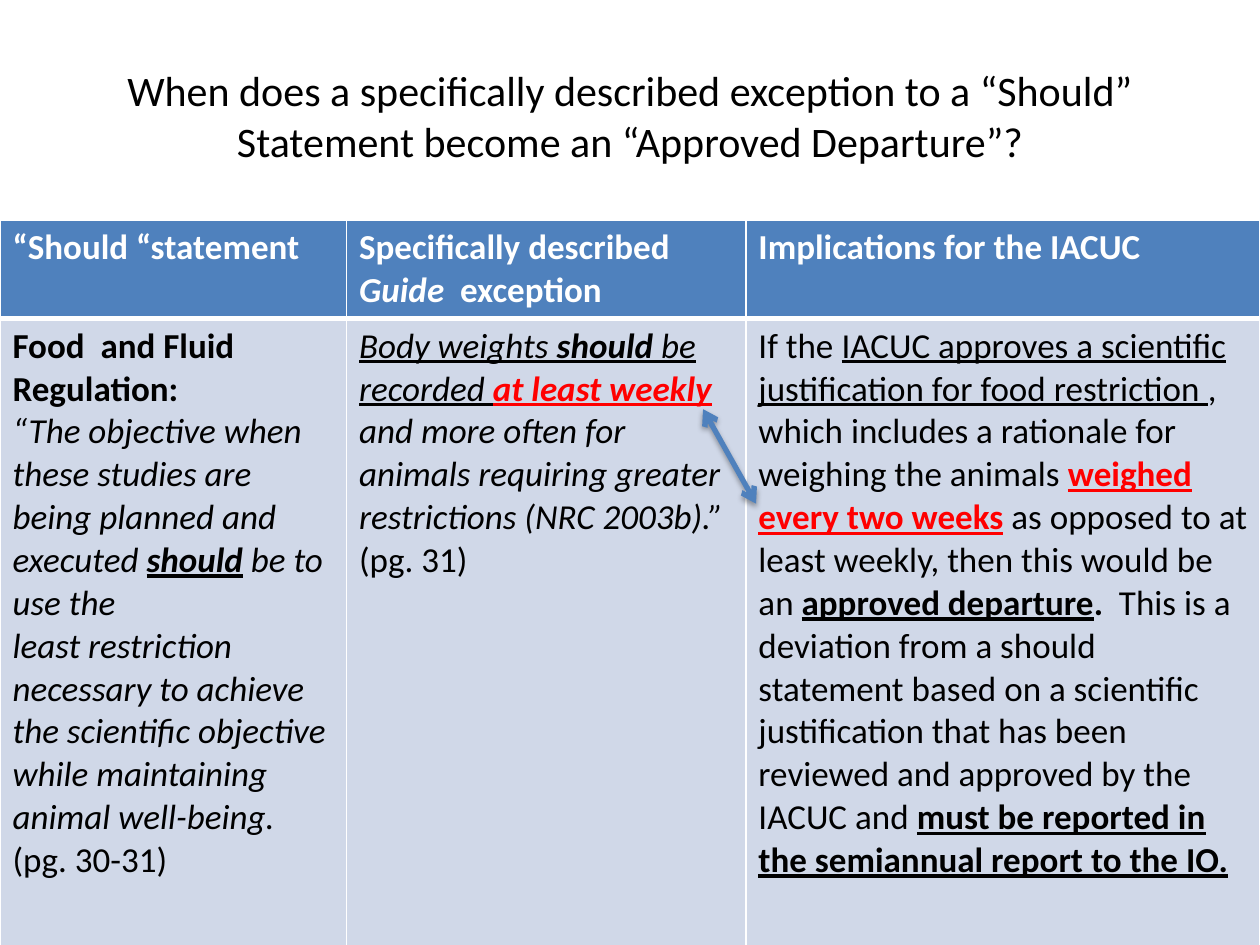
from typing import NamedTuple

from lxml import etree
from pptx import Presentation
from pptx import util as u
from pptx.dml.color import RGBColor
from pptx.enum import shapes, text
from pptx.oxml import ns

WIDTH, HEIGHT = u.Inches(10), u.Inches(7.5)
BLUE, PALE, WHITE, BLACK, RED = "4F81BD", "D0D8E8", "FFFFFF", "000000", "FF0000"


class Run(NamedTuple):
    text: str
    style: str = ""
    color: str = BLACK


class Cell(NamedTuple):
    paragraphs: list[list[Run]]
    fill: str = PALE
    bottom: float = 1


def header(*runs: Run) -> Cell:
    return Cell([[Run(r.text, r.style + "b", WHITE) for r in runs]], BLUE, 3)


COLUMNS = [0.275, 0.317, 0.408]
ROWS = [0.102, 0.676]
CELLS = [
    [
        header(Run("“Should “statement")),
        header(Run("Specifically described "), Run("Guide ", "i"), Run(" exception")),
        header(Run("Implications for the IACUC")),
    ],
    [
        Cell([
            [Run("Food  and Fluid Regulation:", "b")],
            [Run("“The objective when these studies are being planned and executed ", "i"),
             Run("should", "biu"), Run(" be to use the", "i")],
            [Run("least restriction necessary to achieve the scientific objective "
                 "while maintaining animal well-being. ", "i"), Run("(pg. 30-31)")],
        ]),
        Cell([[
            Run("Body weights ", "iu"), Run("should", "biu"), Run(" be recorded ", "iu"),
            Run("at least weekly ", "biu", RED),
            Run("and more often for animals requiring greater restrictions (NRC 2003b).”  ", "i"),
            Run("(pg. 31)"),
        ]]),
        Cell([[
            Run("If the "),
            Run("IACUC approves a scientific justification for food restriction ", "u"),
            Run(", which includes a rationale for  weighing the animals "),
            Run("weighed every two weeks", "bu", RED),
            Run(" as opposed to at least weekly, then this would be an "),
            Run("approved departure", "bu"), Run(".", "b"),
            Run(" \u00a0This is a deviation from a should statement based on a scientific "
                "justification that has been reviewed and approved by the IACUC and "),
            Run("must be reported in the semiannual report to the IO.", "bu"),
        ]]),
    ],
]


def rgb(color: str) -> RGBColor:
    return RGBColor.from_string(color)


def x(share: float) -> int:
    return round(WIDTH * share)


def y(share: float) -> int:
    return round(HEIGHT * share)


def add_run(p, content: str, *, size: float, color: str = BLACK, style: str = "") -> None:
    r = p.add_run()
    r.text = content
    r.font.name = "Calibri"
    r.font.size = u.Pt(size)
    r.font.color.rgb = rgb(color)
    r.font.bold = "b" in style
    r.font.italic = "i" in style
    r.font.underline = "u" in style


def add_child(parent, tag: str, **attributes):
    return etree.SubElement(parent, ns.qn(tag), {k: str(v) for k, v in attributes.items()})


def set_borders(cell, top: float, bottom: float) -> None:
    tc_pr = cell._tc.get_or_add_tcPr()
    for side, width in (("L", 1), ("R", 1), ("T", top), ("B", bottom)):
        line = add_child(tc_pr, f"a:ln{side}", w=u.Pt(width))
        add_child(add_child(line, "a:solidFill"), "a:srgbClr", val=WHITE)


def draw_title(s, content: str) -> None:
    sp = s.shapes.title
    sp.left, sp.top, sp.width, sp.height = x(0.05), y(0.044), x(0.9), y(0.156)
    tf = sp.text_frame
    tf.word_wrap = True
    tf.vertical_anchor = text.MSO_ANCHOR.MIDDLE
    p = tf.paragraphs[0]
    p.alignment = text.PP_ALIGN.CENTER
    add_run(p, content, size=24)


def draw_cell(cell, content: Cell, top: float) -> None:
    set_borders(cell, top, content.bottom)
    cell.fill.solid()
    cell.fill.fore_color.rgb = rgb(content.fill)
    tf = cell.text_frame
    for i, runs in enumerate(content.paragraphs):
        p = tf.add_paragraph() if i else tf.paragraphs[0]
        for run in runs:
            add_run(p, run.text, size=20, color=run.color, style=run.style)


def draw_table(s) -> None:
    table = s.shapes.add_table(len(ROWS), len(COLUMNS), 0, y(0.233),
                               WIDTH, y(sum(ROWS))).table
    for column, share in zip(table.columns, COLUMNS):
        column.width = x(share)
    for row, share in zip(table.rows, ROWS):
        row.height = y(share)
    for i, contents in enumerate(CELLS):
        for j, content in enumerate(contents):
            top = CELLS[i - 1][j].bottom if i else 1
            draw_cell(table.cell(i, j), content, top)


def draw_arrow(s, start: tuple[float, float], end: tuple[float, float]) -> None:
    c = s.shapes.add_connector(shapes.MSO_CONNECTOR.STRAIGHT,
                               x(start[0]), y(start[1]), x(end[0]), y(end[1]))
    c.line.color.rgb = rgb(BLUE)
    c.line.width = u.Pt(3)
    ln = c.line._get_or_add_ln()
    for tag in ("a:headEnd", "a:tailEnd"):
        add_child(ln, tag, type="arrow")
    effects = add_child(c._element.spPr, "a:effectLst")
    shadow = add_child(effects, "a:outerShdw", blurRad=u.Pt(3.1), dist=u.Pt(1.8),
                       dir=90 * 60000, rotWithShape=0)
    add_child(add_child(shadow, "a:srgbClr", val=BLACK), "a:alpha", val=35000)


def main() -> None:
    prs = Presentation()
    prs.slide_width, prs.slide_height = WIDTH, HEIGHT
    s = prs.slides.add_slide(prs.slide_layouts[5])
    draw_title(s, "When does a specifically described exception to a “Should” "
                  "Statement become an “Approved Departure”?")
    draw_table(s)
    draw_arrow(s, (0.558, 0.433), (0.6, 0.533))
    prs.save("out.pptx")


if __name__ == "__main__":
    main()
